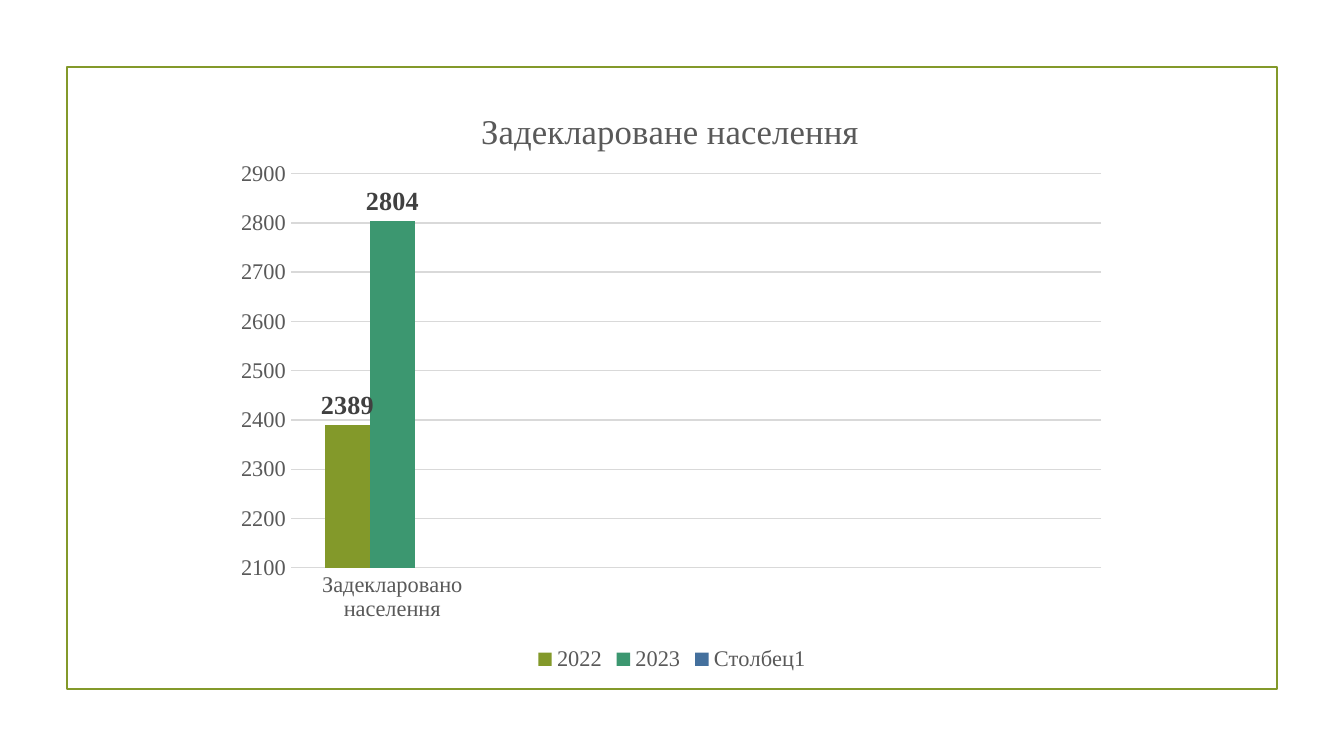
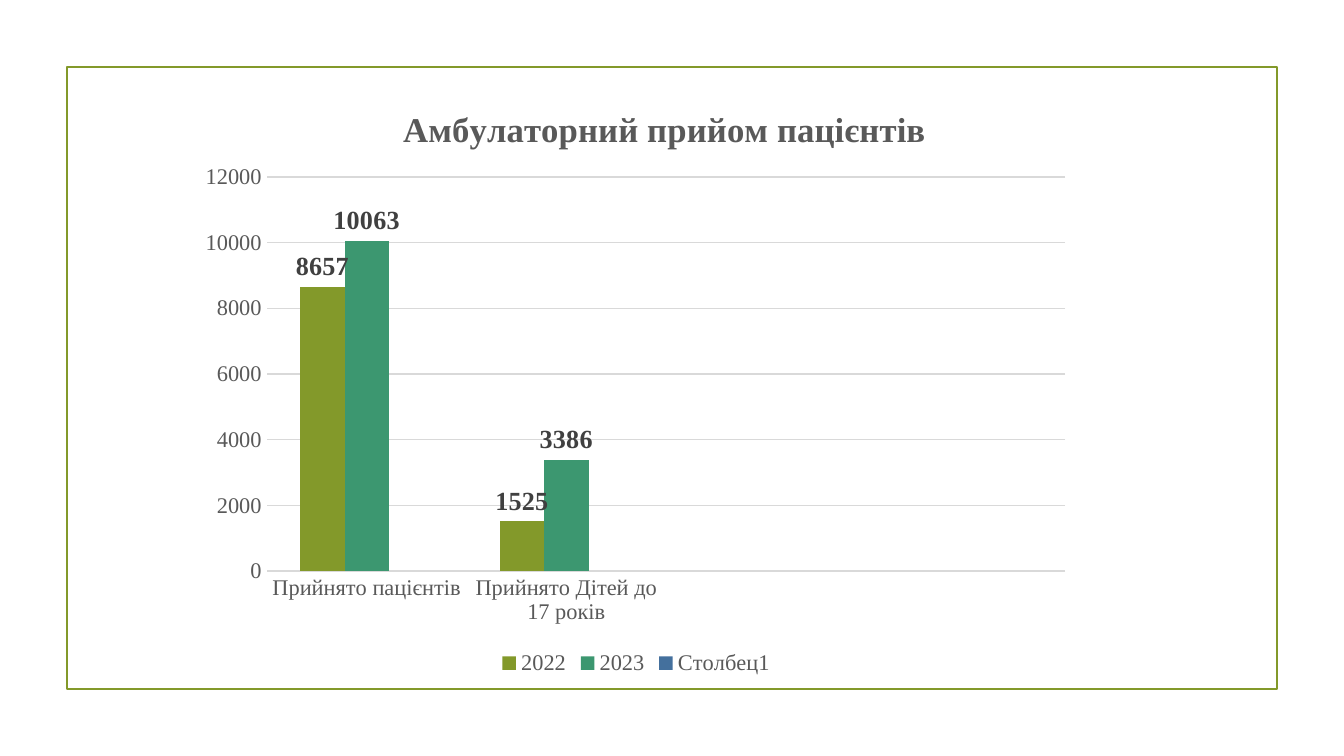
from lxml import etree
from pptx import Presentation
from pptx.chart.data import CategoryChartData as Data
from pptx.dml.color import RGBColor as Rgb
from pptx.enum.chart import XL_CHART_TYPE as Kind
from pptx.enum.chart import XL_LABEL_POSITION as Spot
from pptx.enum.chart import XL_LEGEND_POSITION as Side
from pptx.enum.chart import XL_TICK_MARK as Tick
from pptx.enum.shapes import MSO_SHAPE as Shape
from pptx.oxml.ns import qn
from pptx.util import Pt

# Content: each chart has four slots, unused ones stay blank
SLOTS = 4
YEARS = ["2022", "2023", "Столбец1"]
CHARTS = [
    dict(
        title="Задеклароване населення", bold=False,
        at=(120, 42.5), head=(0.28, 0.04),
        plot=(0.075, 0.158, 0.904, 0.66),
        scale=(2100, 2900, 100),
        rows=[("Задекларовано населення", 2389, 2804)],
    ),
    dict(
        title="Амбулаторний прийом пацієнтів", bold=True,
        at=(100.8, 44.6), head=(0.233, 0.03),
        plot=(0.088, 0.157, 0.891, 0.66),
        scale=(0, 12000, 2000),
        rows=[
            ("Прийнято пацієнтів", 8657, 10063),
            ("Прийнято Дітей до 17 років", 1525, 3386),
        ],
    ),
]

# Shared look
WIDE, HIGH, EDGE = 720, 405, 36
SIZE = (480, 320)
HEX = dict(olive="83992A", green="3C9770", blue="44709D",
           text="595959", label="404040", grid="D9D9D9")
BARS = ["olive", "green", "blue"]
FACE = "Times New Roman"
TEXT = dict(name=FACE, size=Pt(12), bold=False)
HEAD = dict(name=FACE, size=Pt(18.6))
MARK = dict(name=FACE, size=Pt(14), bold=True)
AXIS = dict(major_tick_mark=Tick.NONE, minor_tick_mark=Tick.NONE)


def tint(name):
    return Rgb.from_string(HEX[name])


def apply(item, form):
    for key, val in form.items():
        setattr(item, key, val)


def style(font, form, color="text"):
    apply(font, form)
    font.color.rgb = tint(color)


def place(node, index, box, inner=False):
    """Give a chart part a fixed place, as shares of the chart."""
    for old in node.findall(qn("c:layout")):
        node.remove(old)
    lay = etree.Element(qn("c:layout"))
    man = etree.SubElement(lay, qn("c:manualLayout"))
    tags = [("layoutTarget", "inner")] if inner else []
    tags += [("xMode", "edge"), ("yMode", "edge")]
    tags += zip("xywh", box)
    for tag, val in tags:
        etree.SubElement(man, qn(f"c:{tag}")).set("val", str(val))
    node.insert(index, lay)


def frame(slide):
    box = slide.shapes.add_shape(Shape.RECTANGLE, Pt(EDGE), Pt(EDGE),
                                 Pt(WIDE - 2 * EDGE), Pt(HIGH - 2 * EDGE))
    box.shadow.inherit = False
    box.fill.background()
    box.line.color.rgb = tint("olive")
    box.line.width = Pt(1.25)


def table(rows):
    data = Data()
    full = rows + [("", None, None)] * (SLOTS - len(rows))
    data.categories = [row[0] for row in full]
    for i, year in enumerate(YEARS, 1):
        data.add_series(year, [row[i] if i < len(row) else None
                               for row in full])
    return data


def draw(slide, item):
    spot = [Pt(n) for n in item["at"] + SIZE]
    chart = slide.shapes.add_chart(Kind.COLUMN_CLUSTERED, *spot,
                                   table(item["rows"])).chart
    style(chart.font, TEXT)

    # Title
    chart.has_title = True
    para = chart.chart_title.text_frame.paragraphs[0]
    run = para.add_run()
    run.text = item["title"]
    style(run.font, HEAD | dict(bold=item["bold"]))
    chart.chart_title.include_in_layout = False
    place(chart.chart_title.element, 1, item["head"])

    # Legend
    chart.has_legend = True
    apply(chart.legend, dict(position=Side.BOTTOM, include_in_layout=False))
    style(chart.legend.font, TEXT)

    # Axes
    for axis in (chart.category_axis, chart.value_axis):
        apply(axis, AXIS)
        style(axis.tick_labels.font, TEXT)
        axis.format.line.fill.background()
    low, top, step = item["scale"]
    apply(chart.value_axis, dict(minimum_scale=low, maximum_scale=top,
                                 major_unit=step, has_major_gridlines=True))
    grid = chart.value_axis.major_gridlines.format.line
    grid.color.rgb = tint("grid")
    grid.width = Pt(0.75)

    # Columns and their values
    plot = chart.plots[0]
    apply(plot, dict(gap_width=150, overlap=0, vary_by_categories=False))
    for bar, color in zip(plot.series, BARS):
        bar.format.fill.solid()
        bar.format.fill.fore_color.rgb = tint(color)
        tags = bar.data_labels
        apply(tags, dict(show_value=True, position=Spot.OUTSIDE_END))
        style(tags.font, TEXT if color == "blue" else MARK, "label")
    area = chart.element.find(".//" + qn("c:plotArea"))
    place(area, 0, item["plot"], inner=True)


def main():
    deck = Presentation()
    deck.slide_width, deck.slide_height = Pt(WIDE), Pt(HIGH)
    for item in CHARTS:
        slide = deck.slides.add_slide(deck.slide_layouts[6])
        frame(slide)
        draw(slide, item)
    deck.save("out.pptx")


if __name__ == "__main__":
    main()
